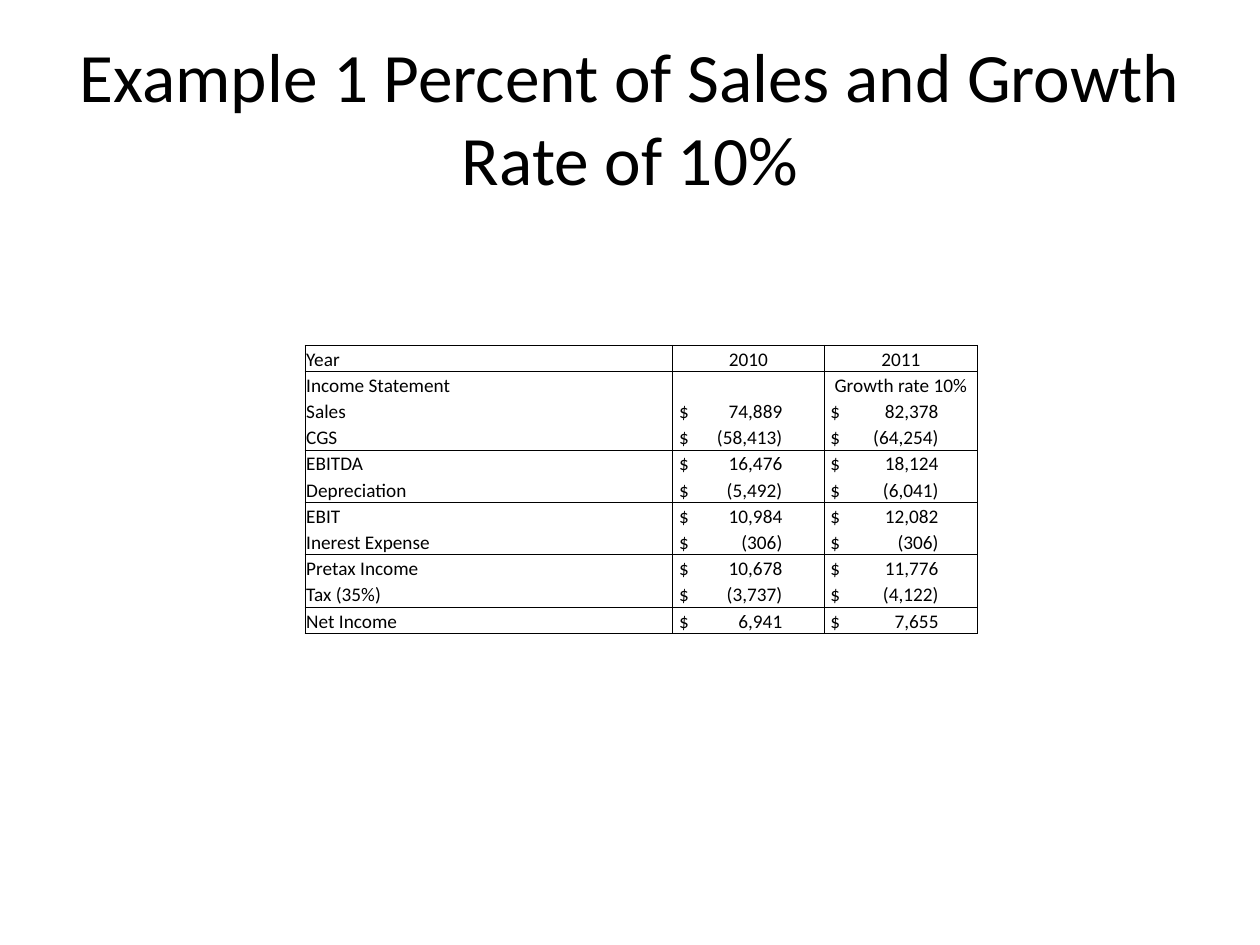
from lxml.etree import SubElement
from pptx import Presentation
from pptx.dml.color import RGBColor
from pptx.enum.text import MSO_ANCHOR as ANCHOR, PP_ALIGN as ALIGN
from pptx.oxml.ns import qn
from pptx.util import Inches, Pt

ROWS = [
    ("Year", "2010", "2011"),
    ("Income Statement", "", "Growth rate 10%"),
    ("Sales", "74,889", "82,378"),
    ("CGS", "(58,413)", "(64,254)"),
    ("EBITDA", "16,476", "18,124"),
    ("Depreciation", "(5,492)", "(6,041)"),
    ("EBIT", "10,984", "12,082"),
    ("Inerest Expense", "(306)", "(306)"),
    ("Pretax Income", "10,678", "11,776"),
    ("Tax (35%)", "(3,737)", "(4,122)"),
    ("Net Income", "6,941", "7,655"),
]
COL_WIDTHS = [2.92, 1.2, 1.22]
NUMBER_TABS = [None, 0.82, 0.86]
HEADER_ROWS = 2
RULED_ROWS = {0, 3, 5, 7, 9, 10}


def color(value):
    return RGBColor.from_string(value)


def write(tf, text, size, font="Calibri", fill="000000", align=ALIGN.LEFT, tab=None):
    p = tf.paragraphs[0]
    p.alignment = align
    if tab:
        tabs = SubElement(p._p.get_or_add_pPr(), qn("a:tabLst"))
        SubElement(tabs, qn("a:tab"), pos=str(Inches(tab)), algn="r")
    if not text:
        SubElement(p._p, qn("a:endParaRPr"), sz=str(size * 100))
        return
    r = p.add_run()
    r.text = text
    r.font.name = font
    r.font.size = Pt(size)
    r.font.color.rgb = color(fill)


class SlideBuilder:
    title_size = 39.6
    cell_size = 11
    line_color = "000000"
    line_width = 0.5

    def __init__(self, s):
        self.s = s

    def title(self, text, left, top, width, height):
        sp = self.s.shapes.add_textbox(*map(Inches, (left, top, width, height)))
        tf = sp.text_frame
        tf.word_wrap = True
        tf.vertical_anchor = ANCHOR.MIDDLE
        write(tf, text, self.title_size, align=ALIGN.CENTER)

    def borders(self, cell, top, bottom):
        tc_pr = cell._tc.get_or_add_tcPr()
        for side, shown in (("L", True), ("R", True), ("T", top), ("B", bottom)):
            ln = SubElement(tc_pr, qn(f"a:ln{side}"), w=str(Pt(self.line_width)))
            if shown:
                solid = SubElement(ln, qn("a:solidFill"))
                SubElement(solid, qn("a:srgbClr"), val=self.line_color)
            else:
                SubElement(ln, qn("a:noFill"))

    def cell(self, cell, text, i, j):
        is_number = i >= HEADER_ROWS and j > 0
        cell.margin_left = Inches(0.05 if is_number else 0.01)
        cell.margin_right = cell.margin_top = Inches(0.01)
        cell.margin_bottom = 0
        cell.vertical_anchor = ANCHOR.BOTTOM
        self.borders(cell, i == 0 or i - 1 in RULED_ROWS, i in RULED_ROWS)
        cell.fill.background()
        if is_number:
            write(cell.text_frame, f"$\t{text}", self.cell_size, tab=NUMBER_TABS[j])
        else:
            align = ALIGN.CENTER if j else ALIGN.LEFT
            write(cell.text_frame, text, self.cell_size, align=align)

    def table(self, rows, widths, left, top, height):
        box = map(Inches, (left, top, sum(widths), height))
        table = self.s.shapes.add_table(len(rows), len(widths), *box).table
        table.first_row = table.horz_banding = False
        for column, width in zip(table.columns, widths):
            column.width = Inches(width)
        for i, row in enumerate(rows):
            for j, text in enumerate(row):
                self.cell(table.cell(i, j), text, i, j)


def main():
    prs = Presentation()
    prs.slide_width, prs.slide_height = Inches(10), Inches(7.5)
    slide = SlideBuilder(prs.slides.add_slide(prs.slide_layouts[6]))
    slide.title("Example 1 Percent of Sales and Growth Rate of 10%", 0.5, 0.3, 9, 1.25)
    slide.table(ROWS, COL_WIDTHS, 2.42, 2.74, 2.29)
    prs.save("out.pptx")


if __name__ == "__main__":
    main()
